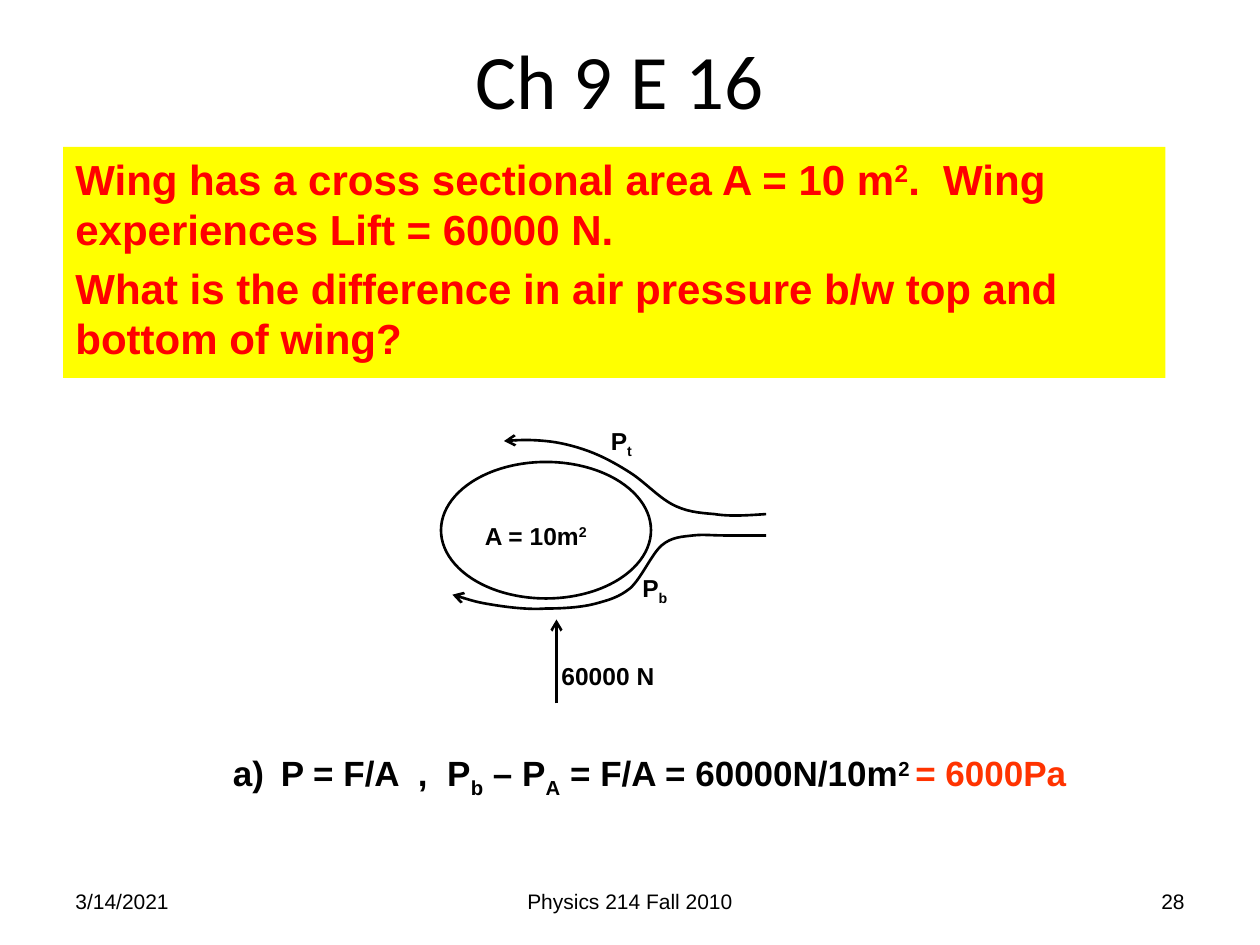
import itertools

import pptx
import pptx.dml.color
import pptx.enum.shapes
import pptx.enum.text
import pptx.oxml.ns
import pptx.util
from lxml import etree

COLORS = {"black": "000000", "red": "FF0000", "yellow": "FFFF00", "answer": "FF3300"}
RGB = {name: pptx.dml.color.RGBColor.from_string(value) for name, value in COLORS.items()}
ALIGN = pptx.enum.text.PP_ALIGN
ANCHOR = pptx.enum.text.MSO_ANCHOR
SHAPE = pptx.enum.shapes.MSO_SHAPE
qn = pptx.oxml.ns.qn
SUB, SUP = "-25000", "30000"

prs = pptx.Presentation()
prs.slide_width = pptx.util.Inches(10)
prs.slide_height = pptx.util.Inches(7.5)
UNIT = prs.slide_width // 120  # grid of 120 columns and 90 rows
slide = prs.slides.add_slide(prs.slide_layouts[6])


def write(sp, paragraphs, size, color="black", bold=True, font="Arial",
          align=ALIGN.LEFT, anchor=ANCHOR.TOP, wrap=True):
    """Fill a shape with paragraphs, each a list of (text, baseline shift)."""
    tf = sp.text_frame
    tf.word_wrap = wrap
    tf.vertical_anchor = anchor
    for i, pieces in enumerate(paragraphs):
        p = tf.add_paragraph() if i else tf.paragraphs[0]
        p.alignment = align
        if i:
            p.space_before = pptx.util.Pt(size * 0.2)
        for text, shift in pieces:
            r = p.add_run()
            r.text = text
            for name, value in {"size": pptx.util.Pt(size), "bold": bold, "name": font}.items():
                setattr(r.font, name, value)
            r.font.color.rgb = RGB[color]
            if shift:
                r.font._element.set("baseline", shift)


def outline(s, arrow):
    """Give a line or outline its black stroke, and an arrowhead at its end if asked."""
    s.line.color.rgb = RGB["black"]
    s.line.width = pptx.util.Pt(1.5)
    if arrow:
        etree.SubElement(s.line._get_or_add_ln(), qn("a:tailEnd"), type="arrow")


# Footer and title
for text, col, width, align in [
    ("3/14/2021", 6, 28, ALIGN.LEFT),
    ("Physics 214 Fall 2010", 41, 38, ALIGN.CENTER),
    ("28", 86, 28, ALIGN.RIGHT),
]:
    sp = slide.shapes.add_textbox(*(int(v * UNIT) for v in (col, 83.4, width, 4.8)))
    write(sp, [[(text, None)]], 12, bold=False, align=align, anchor=ANCHOR.MIDDLE)

title = slide.shapes.add_textbox(5 * UNIT, 0, 108 * UNIT, 15 * UNIT)
write(title, [[("Ch 9 E 16", None)]], 44, bold=False, font="Calibri",
      align=ALIGN.CENTER, anchor=ANCHOR.MIDDLE)

# Question
question = slide.shapes.add_shape(SHAPE.RECTANGLE, *(v * UNIT for v in (6, 14, 105, 22)))
question.shadow.inherit = False
question.fill.solid()
question.fill.fore_color.rgb = RGB["yellow"]
question.line.fill.background()
write(question, [
    [("Wing has a cross sectional area A = 10 m", None), ("2", SUP),
     (".  Wing experiences Lift = 60000 N.", None)],
    [("What is the difference in air pressure b/w top and bottom of wing?", None)],
], 24, "red")

# Answer
answer = slide.shapes.add_textbox(*(int(v * UNIT) for v in (21, 71, 82.5, 5.2)))
write(answer, [[("P = F/A  ,  P", None), ("b", SUB), (" – P", None), ("A", SUB),
                (" = F/A = 60000N/10m", None), ("2 ", SUP), ("= 6000Pa", None)]],
      20, wrap=False)
p = answer.text_frame.paragraphs[0]
p.runs[-1].font.color.rgb = RGB["answer"]
pPr = p._p.get_or_add_pPr()
indent = pptx.util.Inches(0.38)
pPr.set("marL", str(indent))
pPr.set("indent", str(-indent))
etree.SubElement(pPr, qn("a:buFont"), typeface="Arial")
etree.SubElement(pPr, qn("a:buAutoNum"), type="alphaLcParenR")

# Wing diagram
diagram = slide.shapes.add_group_shape().shapes
wing = diagram.add_shape(SHAPE.OVAL, *(v * UNIT for v in (42, 44, 20, 13)))
wing.shadow.inherit = False
wing.fill.background()
outline(wing, arrow=False)

# Air flow: start point, then two control points and an end point per curve,
# in hundredths of an inch
flow_top = [
    (608, 408), (594, 409), (579, 410), (567, 408), (554, 407), (544, 406), (533, 400),
    (522, 394), (511, 382), (500, 375), (489, 368), (478, 362), (467, 358),
    (456, 354), (444, 351), (433, 350), (422, 349), (411, 349), (400, 350),
]
flow_bottom = [
    (608, 425), (597, 425), (585, 425), (575, 425), (565, 425), (558, 424), (550, 425),
    (542, 426), (533, 426), (525, 433), (517, 440), (509, 459), (500, 467),
    (491, 474), (484, 476), (473, 479), (462, 482), (447, 483), (433, 483),
    (420, 484), (403, 482), (391, 480), (378, 478), (366, 474), (359, 472),
]
for points in (flow_top, flow_bottom):
    builder = diagram.build_freeform(*points[0], scale=pptx.util.Inches(0.01))
    builder.add_line_segments(points[1:], close=False)
    flow = builder.convert_to_shape()
    flow.shadow.inherit = False
    flow.fill.background()
    outline(flow, arrow=True)
    # Turn every three straight segments into one cubic curve
    outline_path = next(flow._element.iter(qn("a:path")))
    segments = iter(outline_path.findall(qn("a:lnTo")))
    while triple := list(itertools.islice(segments, 3)):
        curve = etree.SubElement(outline_path, qn("a:cubicBezTo"))
        for segment in triple:
            curve.append(segment[0])
            outline_path.remove(segment)

lift = diagram.add_connector(pptx.enum.shapes.MSO_CONNECTOR.STRAIGHT,
                             *(v * UNIT for v in (53, 67, 53, 59)))
outline(lift, arrow=True)
etree.SubElement(lift._element.spPr, qn("a:effectLst"))

for pieces, col, row, width in [
    ([("A = 10m", None), ("2", SUP)], 45, 49, 13),
    ([("P", None), ("b", SUB)], 60, 54, 7),
    ([("P", None), ("t", SUB)], 57, 40, 7),
    ([("60000 N", None)], 52.3, 62.4, 13),
]:
    label = diagram.add_textbox(*(int(v * UNIT) for v in (col, row, width, 4)))
    write(label, [pieces], 14)

prs.save("out.pptx")
